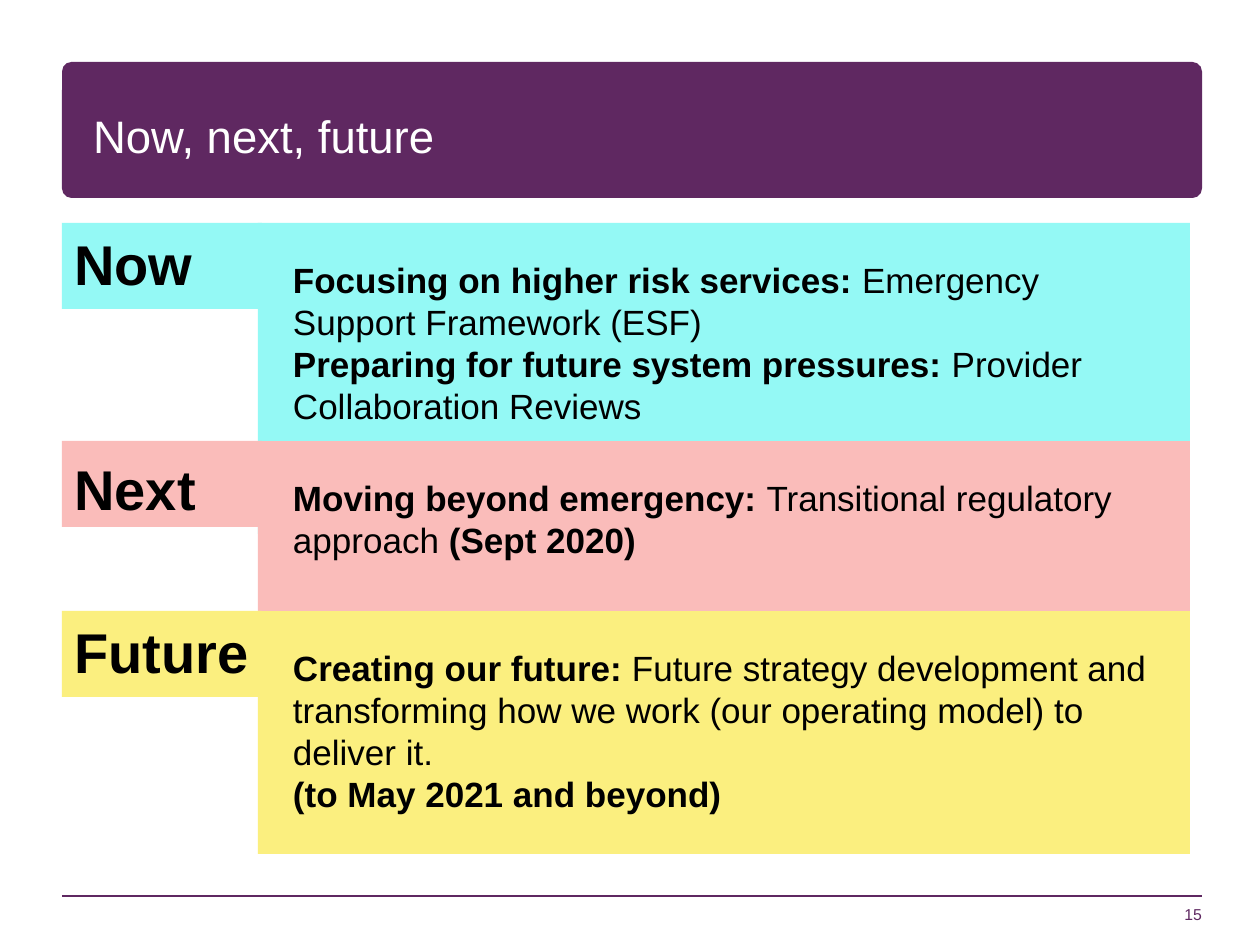
"""Build the "Now, next, future" slide."""
import pptx
import pptx.util
import pptx.dml.color
import pptx.enum.shapes
import pptx.enum.text
import lxml.etree

Pt = pptx.util.Pt
RGB = pptx.dml.color.RGBColor
Kind = pptx.enum.shapes.MSO_SHAPE
Align = pptx.enum.text.PP_ALIGN
Anchor = pptx.enum.text.MSO_ANCHOR

PLUM = RGB(0x5F, 0x28, 0x61)
AQUA = RGB(0x94, 0xF9, 0xF5)
PINK = RGB(0xFA, 0xBC, 0xBA)
GOLD = RGB(0xFB, 0xEF, 0x7F)
BLACK = RGB(0, 0, 0)
WHITE = RGB(255, 255, 255)

TITLE = "Now, next, future"
NUMBER = "15"
ROWS = [
    ("Now", AQUA, 223, 311, [
        [("Focusing on higher risk services: ", True),
         ("Emergency Support Framework (ESF)", False)],
        [("Preparing for future system pressures: ", True),
         ("Provider Collaboration Reviews", False)],
    ]),
    ("Next", PINK, 441, 173, [
        [("Moving beyond emergency: ", True),
         ("Transitional regulatory approach ", False),
         ("(Sept 2020)", True)],
    ]),
    ("Future", GOLD, 611, 243, [
        [("Creating our future: ", True),
         ("Future strategy development and transforming how we work "
          "(our operating model) to deliver it.", False)],
        [("(to May 2021 and beyond)", True)],
    ]),
]
LEFT, RIGHT = 62, 1202
LABEL_W, LABEL_H = 200, 86
BODY_X, BODY_W, BODY_PAD = 258, 932, 35


def px(count):
    return round(count * 914400 / 126)


def style(para, size, color, align=Align.LEFT):
    para.alignment = align
    para.font.name = "Arial"
    para.font.size = Pt(size)
    para.font.color.rgb = color


def pad(frame, gap):
    frame.margin_left = frame.margin_right = px(gap)
    frame.margin_top = frame.margin_bottom = px(gap)


def add_block(slide, kind, box, fill):
    shape = slide.shapes.add_shape(kind, *map(px, box))
    shape.shadow.inherit = False
    shape.fill.solid()
    shape.fill.fore_color.rgb = fill
    shape.line.fill.background()
    shape.text_frame.vertical_anchor = Anchor.TOP
    return shape


def add_title(slide):
    banner = add_block(slide, Kind.ROUNDED_RECTANGLE,
                       (LEFT, 62, RIGHT - LEFT, 136), PLUM)
    banner.adjustments[0] = 0.07
    title = slide.shapes.title
    banner._element.addnext(title._element)
    title.left, title.top, title.width, title.height = map(
        px, (87, 110, 1086, 60))
    frame = title.text_frame
    frame.text = TITLE
    frame.vertical_anchor = Anchor.TOP
    frame.auto_size = pptx.enum.text.MSO_AUTO_SIZE.SHAPE_TO_FIT_TEXT
    pad(frame, 6)
    para = frame.paragraphs[0]
    para.line_spacing = 0.85
    style(para, 26, WHITE)


def add_row(slide, name, fill, top, height, paras):
    body = add_block(slide, Kind.RECTANGLE,
                     (BODY_X, top, BODY_W, height), fill)
    frame = body.text_frame
    pad(frame, BODY_PAD)
    for index, parts in enumerate(paras):
        para = frame.add_paragraph() if index else frame.paragraphs[0]
        style(para, 20, BLACK)
        for text, bold in parts:
            run = para.add_run()
            run.text = text
            run.font.bold = bold
    label = add_block(slide, Kind.RECTANGLE,
                      (LEFT, top, LABEL_W, LABEL_H), fill)
    para = label.text_frame.paragraphs[0]
    style(para, 32, BLACK)
    para.font.bold = True
    para.add_run().text = name
    if name == "Next":
        space = para.add_run()
        space.text = " "
        space.font.size = Pt(36)


def add_footer(slide):
    rule = slide.shapes.add_connector(
        pptx.enum.shapes.MSO_CONNECTOR.STRAIGHT,
        *map(px, (RIGHT, 896, LEFT, 896)))
    rule.line.color.rgb = PLUM
    rule.line.width = Pt(1)
    lxml.etree.SubElement(rule._element.spPr,
                          pptx.oxml.ns.qn("a:effectLst"))
    box = slide.shapes.add_textbox(*map(px, (940, 861, 262, 63)))
    frame = box.text_frame
    frame.word_wrap = True
    frame.vertical_anchor = Anchor.BOTTOM
    pad(frame, 0)
    frame.text = NUMBER
    style(frame.paragraphs[0], 9, PLUM, Align.RIGHT)


def main():
    deck = pptx.Presentation()
    deck.slide_width, deck.slide_height = px(1260), px(945)
    slide = deck.slides.add_slide(deck.slide_layouts[5])
    add_title(slide)
    add_footer(slide)
    for row in ROWS:
        add_row(slide, *row)
    deck.save("out.pptx")


if __name__ == "__main__":
    main()
